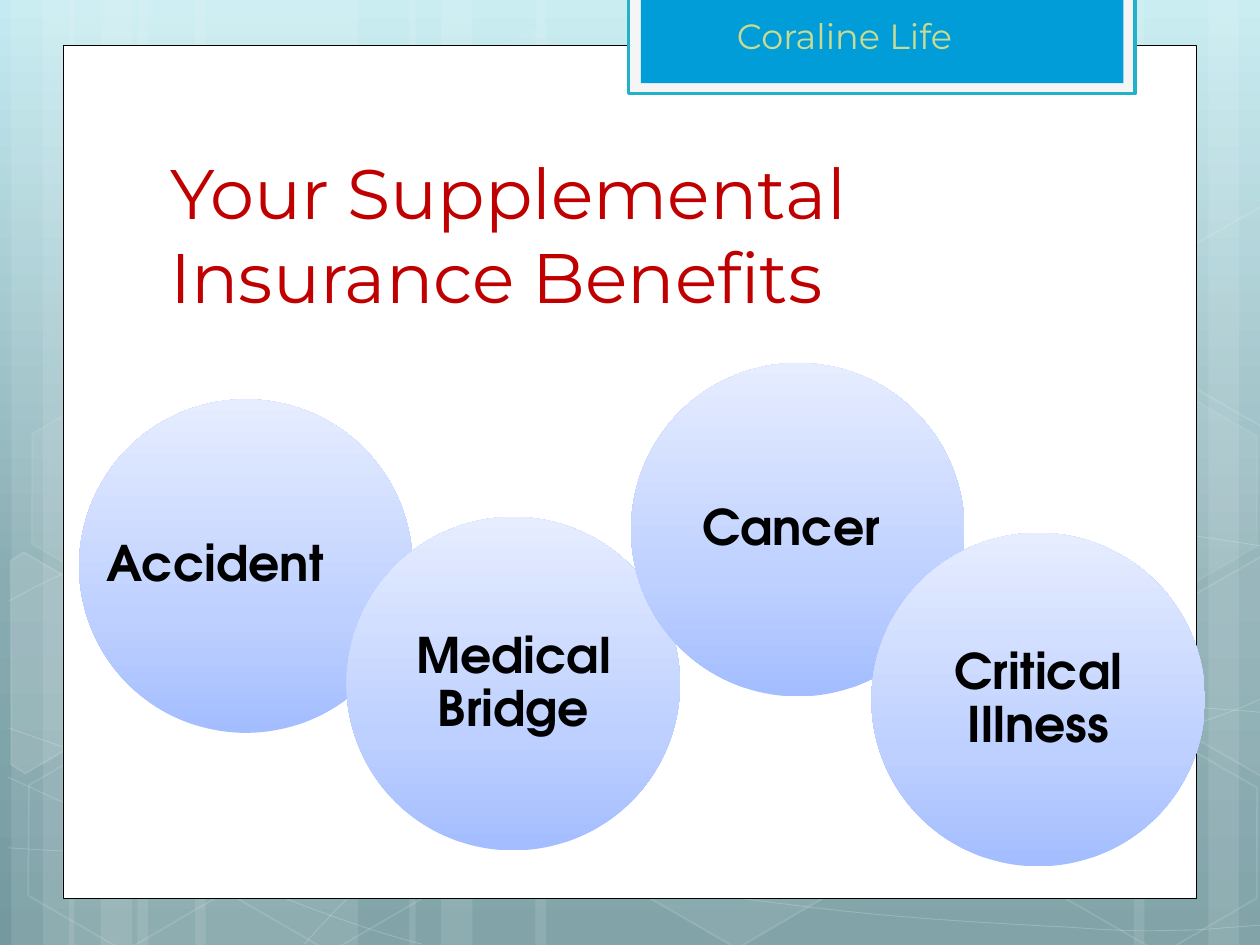
import pptx
import pptx.dml.color
import pptx.enum.shapes
import pptx.enum.text
import pptx.oxml.ns
import pptx.util
from lxml import etree

Pt = pptx.util.Pt
RGB = pptx.dml.color.RGBColor
SHAPE = pptx.enum.shapes.MSO_SHAPE
ALIGN = pptx.enum.text.PP_ALIGN
ANCHOR = pptx.enum.text.MSO_ANCHOR
qn = pptx.oxml.ns.qn

WHITE, BLACK = RGB(255, 255, 255), RGB(0, 0, 0)
TAB_EDGE, TAB_RIM, TAB_BLUE = RGB(0x21, 0xB2, 0xC9), RGB(0xF5, 0xF5, 0xF5), RGB(0x00, 0x9D, 0xD9)
TITLE_RED, TAB_GREEN = RGB(0xC0, 0, 0), RGB(0xC9, 0xDA, 0x92)
BACKDROP_STOPS = [(0, RGB(0xC4, 0xEB, 0xF1)), (62, RGB(0x88, 0xAC, 0xB2)), (100, RGB(0x74, 0x9A, 0xA0))]
CIRCLE_STOPS = [(0, RGB(0xA3, 0xBD, 0xFF)), (35, RGB(0xBE, 0xD0, 0xFF)), (100, RGB(0xE6, 0xED, 0xFF))]
HEADING_FONT, BENEFIT_FONT = "Montserrat", "TeX Gyre Adventor"

TITLE = "Your Supplemental Insurance Benefits"
COMPANY = "Coraline Life"
CIRCLE_SIZE = 190.6
# label, circle left and top, label box (left, top, width, height) within the circle
LABEL_BOX = (28, 28, 134.8, 134.8)
BENEFITS = [
    ("Accident ", 45.2, 228.2, (0.2, 27.4, 163, 134.8)),
    ("Medical Bridge", 198, 295.4, LABEL_BOX),
    ("Cancer ", 360.6, 207.4, LABEL_BOX),
    ("Critical Illness", 498, 304.5, LABEL_BOX),
]
# left, width of the pale stripes
STRIPES = [(78.5, 126), (6.5, 36), (24.5, 60), (111.5, 126), (39.5, 36), (57.5, 60),
           (528, 126), (690.5, 36), (648, 60), (306, 222), (234, 36), (252, 60)]
# start point, then Bezier segments of two controls and an end
CURVES = [
    [(5, 484.5), (44, 487, 83, 489, 137, 488), (191, 487.5, 258, 486, 330, 479),
     (402, 471.5, 504, 458, 570, 444), (636, 430.5, 703.5, 409, 725, 397)],
    [(5, 343.5), (26, 332, 47, 321, 87, 310), (128, 299.5, 186.5, 283.5, 250, 278.5),
     (314, 273.5, 391.5, 273, 471, 278.5), (550, 284.5, 682, 306.5, 725, 312.5)],
    [(4.5, 444), (91.5, 484, 178, 523.5, 241, 539.5)],
    [(5, 416), (27.5, 424, 50.5, 432, 92, 443.5), (134, 454.5, 196.5, 472.5, 257, 484.5),
     (317, 497, 392.5, 510, 452, 517), (512, 525, 576, 528, 614, 530),
     (652.5, 533, 661.5, 531.5, 680.5, 531.5), (699, 530.5, 712, 529, 725, 528.5)],
    [(174, 539.5), (187, 525, 200, 510.5, 217.5, 497.5), (234.5, 484, 259, 470, 279.5, 460),
     (299.5, 450, 312, 445.5, 337.5, 438.5), (364.5, 431, 412.5, 421, 438, 416),
     (463.5, 411, 467.5, 411, 489.5, 409.5), (512, 407.5, 547, 405.5, 571.5, 404.5),
     (597, 404, 638, 404.5, 638, 404.5), (654, 404.5, 670, 404.5, 686, 404.5),
     (699, 405.5, 711.5, 406, 724.5, 407.5)],
]
# left, top, fill opacity (0 = none), line opacity
HEXAGONS = [(240.5, 26, 4, 8), (358, 424, 6, 12), (8, 425.5, 0, 12), (10, 224.5, 7, 8),
            (125.5, 426, 0, 12), (600.5, 427, 0, 12), (600.5, 226, 7, 8)]
# hexagons cut by the slide edge: corners, fill opacity
CUT_HEXAGONS = [
    ([(6, 320.5), (13.5, 315.5), (69, 348), (68.5, 410.5), (14.5, 442), (6.5, 437)], 10),
    ([(666.5, 349), (721.5, 317.5), (726.5, 321), (726.5, 441.5), (721.5, 444), (666.5, 412.5)], 4),
    ([(666.5, 149), (721.5, 117.5), (727, 121), (726.5, 241), (721.5, 244), (666.5, 212.5)], 0),
]


def set_gradient(fill, element, stops, angle):
    fill.gradient()
    fill.gradient_angle = angle
    stop_list = next(element.iter(qn("a:gsLst")))
    for old in list(stop_list):
        stop_list.remove(old)
    for position, color in stops:
        stop = etree.SubElement(stop_list, qn("a:gs"), pos=str(position * 1000))
        etree.SubElement(stop, qn("a:srgbClr"), val=str(color))


def set_opacity(shape, where, percent):
    if percent < 100:
        color = shape._element.spPr.find(where + qn("a:solidFill") + "/" + qn("a:srgbClr"))
        etree.SubElement(color, qn("a:alpha"), val=str(percent * 1000))


def style(shape, fill=None, line=None, width=1, fill_opacity=100, line_opacity=100):
    shape.shadow.inherit = False
    if fill is None or not fill_opacity:
        shape.fill.background()
    else:
        shape.fill.solid()
        shape.fill.fore_color.rgb = fill
        set_opacity(shape, "", fill_opacity)
    if line is None:
        shape.line.fill.background()
    else:
        shape.line.color.rgb = line
        shape.line.width = Pt(width)
        set_opacity(shape, qn("a:ln") + "/", line_opacity)


def add_preset(slide, kind, box, *look, **opacity):
    shape = slide.shapes.add_shape(kind, *map(Pt, box))
    style(shape, *look, **opacity)
    return shape


def add_outline(slide, points, close):
    corners = [(Pt(x), Pt(y)) for x, y in points]
    builder = slide.shapes.build_freeform(*corners[0])
    builder.add_line_segments(corners[1:], close=close)
    return builder.convert_to_shape()


def add_curve(slide, start, *segments):
    points = [start] + [pair for s in segments for pair in (s[:2], s[2:4], s[4:])]
    curve = add_outline(slide, points, False)
    # Join every three line steps into one Bezier segment
    steps = list(curve._element.iter(qn("a:lnTo")))
    for first in range(0, len(steps), 3):
        bezier = etree.Element(qn("a:cubicBezTo"))
        steps[first].addprevious(bezier)
        for step in steps[first:first + 3]:
            bezier.append(step[0])
            step.getparent().remove(step)
    return curve


def add_text(slide, box, words, font, size, color, anchor, margins=(7.2, 3.6)):
    frame = slide.shapes.add_textbox(*map(Pt, box)).text_frame
    frame.word_wrap = True
    frame.vertical_anchor = anchor
    frame.margin_left = frame.margin_right = Pt(margins[0])
    frame.margin_top = frame.margin_bottom = Pt(margins[1])
    paragraph = frame.paragraphs[0]
    paragraph.text = words
    paragraph.font.name, paragraph.font.size = font, Pt(size)
    paragraph.font.color.rgb = color
    return paragraph


def main():
    deck = pptx.Presentation()
    deck.slide_width, deck.slide_height = Pt(720), Pt(540)
    slide = deck.slides.add_slide(deck.slide_layouts[6])

    # Backdrop: gradient, stripes, curves and hexagons
    set_gradient(slide.background.fill, slide._element, BACKDROP_STOPS, 270)
    for left, width in STRIPES:
        add_preset(slide, SHAPE.RECTANGLE, (left, 0, width, 540), WHITE, fill_opacity=10)
    for curve in CURVES:
        style(add_curve(slide, *curve), None, WHITE, 0.5, line_opacity=20)
    for left, top, fill_opacity, line_opacity in HEXAGONS:
        hexagon = add_preset(slide, SHAPE.HEXAGON, (left, top, 126, 109.5), WHITE, WHITE,
                             fill_opacity=fill_opacity, line_opacity=line_opacity)
        hexagon.adjustments[0], hexagon.adjustments[1] = 0.285, 1.155
        hexagon.rotation = 30
    for corners, fill_opacity in CUT_HEXAGONS:
        style(add_outline(slide, corners, True), WHITE, WHITE,
              fill_opacity=fill_opacity, line_opacity=12)

    # White panel and company tab
    add_preset(slide, SHAPE.RECTANGLE, (36, 26, 648, 487.5), WHITE, BLACK, 0.5)
    add_preset(slide, SHAPE.RECTANGLE, (359.2, -1.5, 289.5, 55), TAB_RIM, TAB_EDGE, 2)
    add_preset(slide, SHAPE.RECTANGLE, (366.25, -1.5, 275.8, 49), TAB_BLUE)

    # Title and company name
    add_text(slide, (90.3, 78, 522.5, 107), TITLE, HEADING_FONT, 40, TITLE_RED, ANCHOR.BOTTOM)
    add_text(slide, (414, 6, 198.5, 29), COMPANY, HEADING_FONT, 20, TAB_GREEN, ANCHOR.MIDDLE)

    # Benefit circles with their labels
    for label, left, top, (dx, dy, width, height) in BENEFITS:
        circle = add_preset(slide, SHAPE.OVAL, (left, top, CIRCLE_SIZE, CIRCLE_SIZE))
        set_gradient(circle.fill, circle._element, CIRCLE_STOPS, 90)
        benefit = add_text(slide, (left + dx, top + dy, width, height), label, BENEFIT_FONT,
                           28, BLACK, ANCHOR.MIDDLE, (10.8, 3))
        benefit.font.bold = True
        benefit.alignment = ALIGN.CENTER
        benefit.line_spacing = 0.9

    deck.save("out.pptx")


if __name__ == "__main__":
    main()
